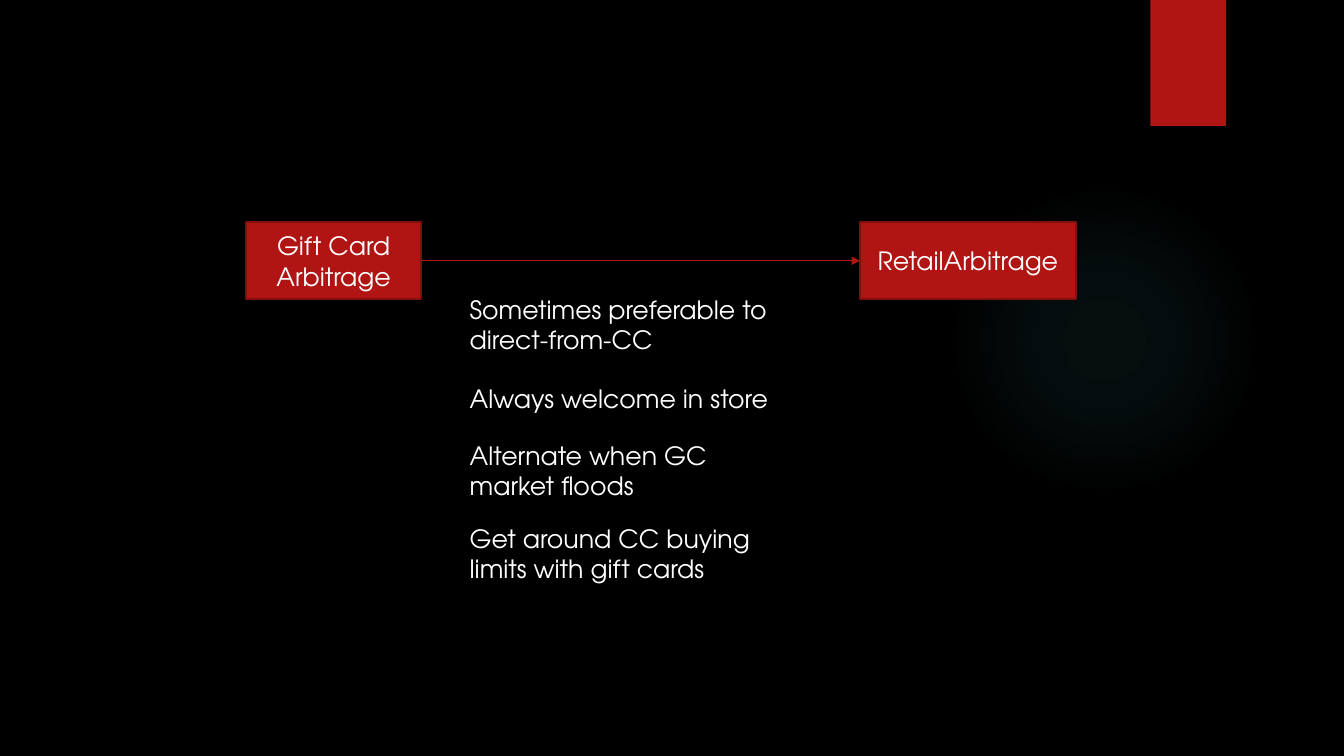
from lxml import etree
from pptx import Presentation
from pptx import util as u
from pptx.dml.color import RGBColor
from pptx.enum import shapes, text
from pptx.oxml import parse_xml
from pptx.oxml.ns import nsdecls, qn

RED, DARK_RED, WHITE, BLACK, TEAL = "B01513", "82100E", "FFFFFF", "000000", "50B9C1"


def color(value):
    return RGBColor.from_string(value)


class SlideBuilder:
    """Places styled elements; every length is a percentage of the slide size."""

    font_name = "TeX Gyre Adventor"
    font_size = u.Pt(18)

    def __init__(self, presentation):
        self.width = presentation.slide_width
        self.height = presentation.slide_height
        self.slide = presentation.slides.add_slide(presentation.slide_layouts[6])
        fill = self.slide.background.fill
        fill.solid()
        fill.fore_color.rgb = color(BLACK)

    def area(self, left, top, width, height):
        return (int(self.width * left / 100), int(self.height * top / 100),
                int(self.width * width / 100), int(self.height * height / 100))

    def set_words(self, shape, words, alignment, anchor):
        frame = shape.text_frame
        frame.word_wrap = True
        frame.vertical_anchor = anchor
        frame.text = words
        paragraph = frame.paragraphs[0]
        paragraph.alignment = alignment
        font = paragraph.runs[0].font
        font.name, font.size = self.font_name, self.font_size
        font.color.rgb = color(WHITE)

    def block(self, kind, *area, fill=RED, line=None):
        shape = self.slide.shapes.add_shape(kind, *self.area(*area))
        shape.shadow.inherit = False
        shape.fill.solid()
        shape.fill.fore_color.rgb = color(fill)
        if line:
            shape.line.color.rgb = color(line)
            shape.line.width = u.Pt(1.5)
        else:
            shape.line.fill.background()
        return shape

    def glow(self, *area, stops):
        shape = self.block(shapes.MSO_SHAPE.OVAL, *area, fill=TEAL)
        stop_xml = "".join(
            f'<a:gs pos="{position * 1000}"><a:srgbClr val="{TEAL}">'
            f'<a:alpha val="{opacity * 1000}"/></a:srgbClr></a:gs>'
            for position, opacity in stops)
        gradient = parse_xml(
            f'<a:gradFill {nsdecls("a")} rotWithShape="1"><a:gsLst>{stop_xml}</a:gsLst>'
            '<a:path path="circle"><a:fillToRect l="50000" t="50000" r="50000" b="50000"/>'
            '</a:path></a:gradFill>')
        properties = shape.element.spPr
        properties.replace(properties.find(qn("a:solidFill")), gradient)

    def process(self, words, *area):
        shape = self.block(shapes.MSO_SHAPE.FLOWCHART_PROCESS, *area, line=DARK_RED)
        self.set_words(shape, words, text.PP_ALIGN.CENTER, text.MSO_ANCHOR.MIDDLE)
        return shape

    def arrow(self, source, target):
        connector = self.slide.shapes.add_connector(shapes.MSO_CONNECTOR.STRAIGHT, 0, 0, 0, 0)
        connector.begin_connect(source, 3)
        connector.end_connect(target, 1)
        connector.line.color.rgb = color(RED)
        connector.line.width = u.Pt(0.75)
        properties = connector.element.spPr
        etree.SubElement(properties.find(qn("a:ln")), qn("a:tailEnd"), type="triangle")
        etree.SubElement(properties, qn("a:effectLst"))

    def note(self, words, *area):
        shape = self.slide.shapes.add_textbox(*self.area(*area))
        self.set_words(shape, words, text.PP_ALIGN.LEFT, text.MSO_ANCHOR.TOP)
        shape.text_frame.auto_size = text.MSO_AUTO_SIZE.SHAPE_TO_FIT_TEXT


def main():
    presentation = Presentation()
    presentation.slide_width, presentation.slide_height = u.Inches(13.33), u.Inches(7.5)
    builder = SlideBuilder(presentation)

    # Backdrop
    builder.glow(70.59, 24.4, 23.11, 41.07, stops=[(0, 7), (36, 6), (69, 0)])
    builder.block(shapes.MSO_SHAPE.RECTANGLE, 85.6, 0, 5.63, 16.67)

    # Flow from gift cards to retail
    box_top, box_height = 29.4, 10.2
    gift_card = builder.process("Gift Card Arbitrage", 18.3, box_top, 13.05, box_height)
    retail = builder.process("RetailArbitrage", 63.99, box_top, 16.05, box_height)
    builder.arrow(gift_card, retail)

    # Reasons under the arrow
    one_line, two_lines = 5.33, 9.47
    for words, top, height in (
        ("Sometimes preferable to direct-from-CC", 38.27, two_lines),
        ("Always welcome in store", 50, one_line),
        ("Alternate when GC market floods", 57.6, two_lines),
        ("Get around CC buying limits with gift cards", 68.53, two_lines),
    ):
        builder.note(words, 34.21, top, 25.21, height)

    presentation.save("out.pptx")


if __name__ == "__main__":
    main()
